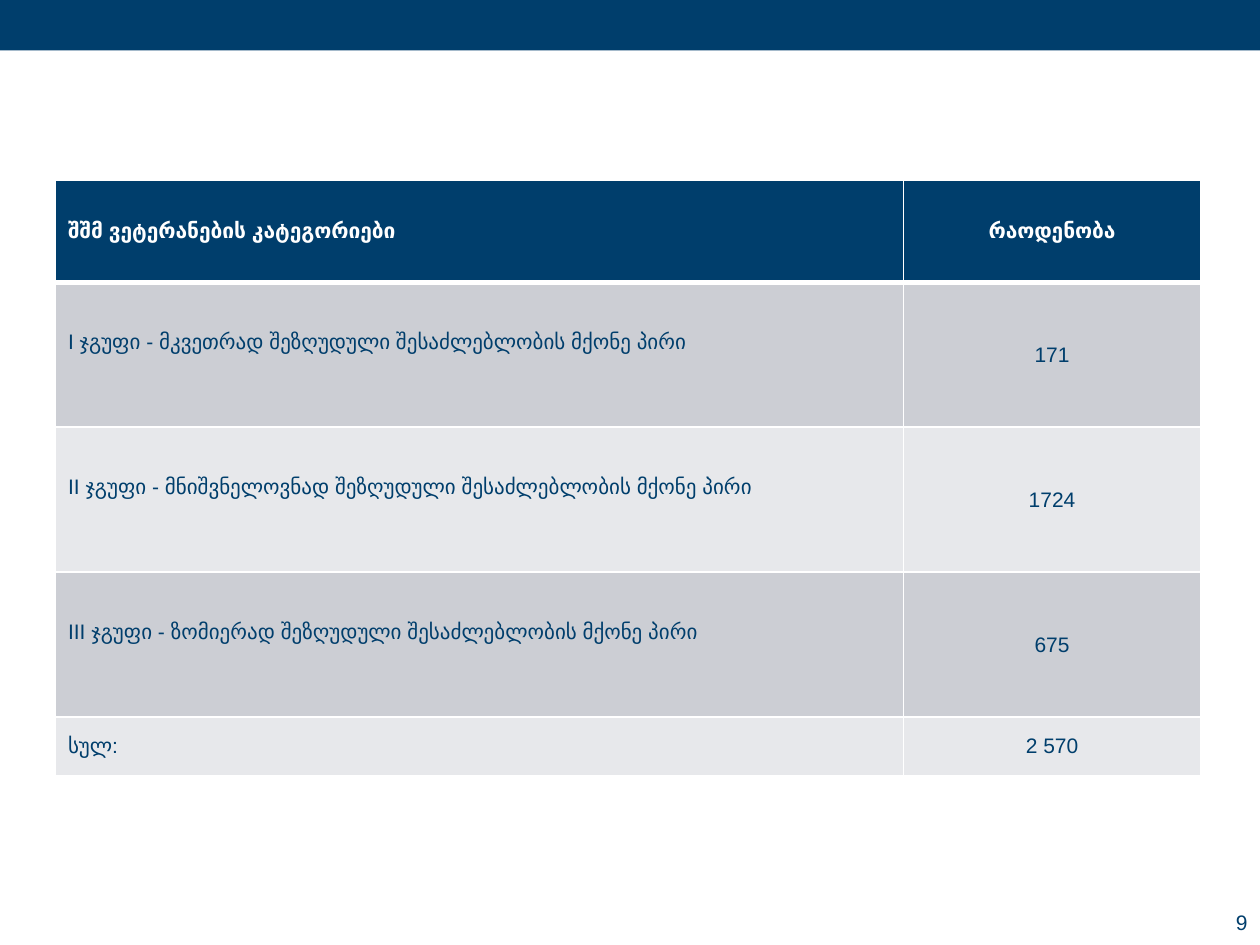
from lxml import etree
from pptx import Presentation, util as u
from pptx.dml.color import RGBColor
from pptx.enum import shapes, text
from pptx.oxml.ns import qn

NAVY, WHITE, GREY, LIGHT = "003E6C", "FFFFFF", "CCCED4", "E7E8EB"


def rgb(value):
    return RGBColor.from_string(value)


def add_border(cell, side, width):
    """Draw a white line on one side (L, R, T or B) of a cell; call before filling it."""
    ln = etree.SubElement(cell._tc.get_or_add_tcPr(), qn(f"a:ln{side}"), w=str(u.Pt(width)))
    fill = etree.SubElement(ln, qn("a:solidFill"))
    etree.SubElement(fill, qn("a:srgbClr"), val=WHITE)


prs = Presentation()
prs.slide_width, prs.slide_height = u.Inches(10), u.Inches(7.5)
s = prs.slides.add_slide(prs.slide_layouts[6])

# Top band
sp = s.shapes.add_shape(shapes.MSO_SHAPE.RECTANGLE, 0, 0, prs.slide_width, u.Inches(0.4))
sp.shadow.inherit = False
sp.fill.solid()
sp.fill.fore_color.rgb = rgb(NAVY)
sp.line.fill.background()

# Veterans table: label, count, row height, fill
rows = [
    ("შშმ ვეტერანების კატეგორიები", "რაოდენობა", 0.81, NAVY),
    ("I ჯგუფი - მკვეთრად შეზღუდული შესაძლებლობის მქონე პირი", "171", 1.15, GREY),
    ("II ჯგუფი - მნიშვნელოვნად შეზღუდული შესაძლებლობის მქონე პირი", "1724", 1.15, LIGHT),
    ("III ჯგუფი - ზომიერად შეზღუდული შესაძლებლობის მქონე პირი", "675", 1.15, GREY),
    ("სულ:", "2 570", 0.47, LIGHT),
]
table = s.shapes.add_table(len(rows), 2, u.Inches(0.44), u.Inches(1.43),
                           u.Inches(9.09), u.Inches(4.73)).table
for column, width in zip(table.columns, (6.73, 2.36)):
    column.width = u.Inches(width)

for i, (label, count, height, color) in enumerate(rows):
    table.rows[i].height = u.Inches(height)
    is_header, is_group = i == 0, 0 < i < len(rows) - 1
    for j, value in enumerate((label, count)):
        cell = table.cell(i, j)
        for side in "LRTB":
            below_header = (i, side) in ((0, "B"), (1, "T"))
            add_border(cell, side, 3 if below_header else 1)
        cell.fill.solid()
        cell.fill.fore_color.rgb = rgb(color)
        cell.vertical_anchor = text.MSO_ANCHOR.MIDDLE
        if is_group and j == 0:
            cell.margin_bottom = u.Inches(0.25)  # lifts the label above the middle
        elif is_group:
            cell.margin_left = cell.margin_right = cell.margin_top = u.Inches(0.01)
            cell.margin_bottom = 0
        p = cell.text_frame.paragraphs[0]
        p.text = value
        if j == 1:
            p.alignment = text.PP_ALIGN.CENTER
        elif is_group:
            p.alignment = text.PP_ALIGN.JUSTIFY
        p.font.name, p.font.size = "Arial", u.Pt(12)
        p.font.bold = is_header
        p.font.color.rgb = rgb(WHITE if is_header else NAVY)

# Page number
tf = s.shapes.add_textbox(u.Inches(8.83), u.Inches(7.14), u.Inches(1.17), u.Inches(0.36)).text_frame
tf.word_wrap = True
tf.vertical_anchor = text.MSO_ANCHOR.MIDDLE
p = tf.paragraphs[0]
p.text = "9"
p.alignment = text.PP_ALIGN.RIGHT
p.font.name, p.font.size = "Arial", u.Pt(12)
p.font.color.rgb = rgb(NAVY)

prs.save("out.pptx")
